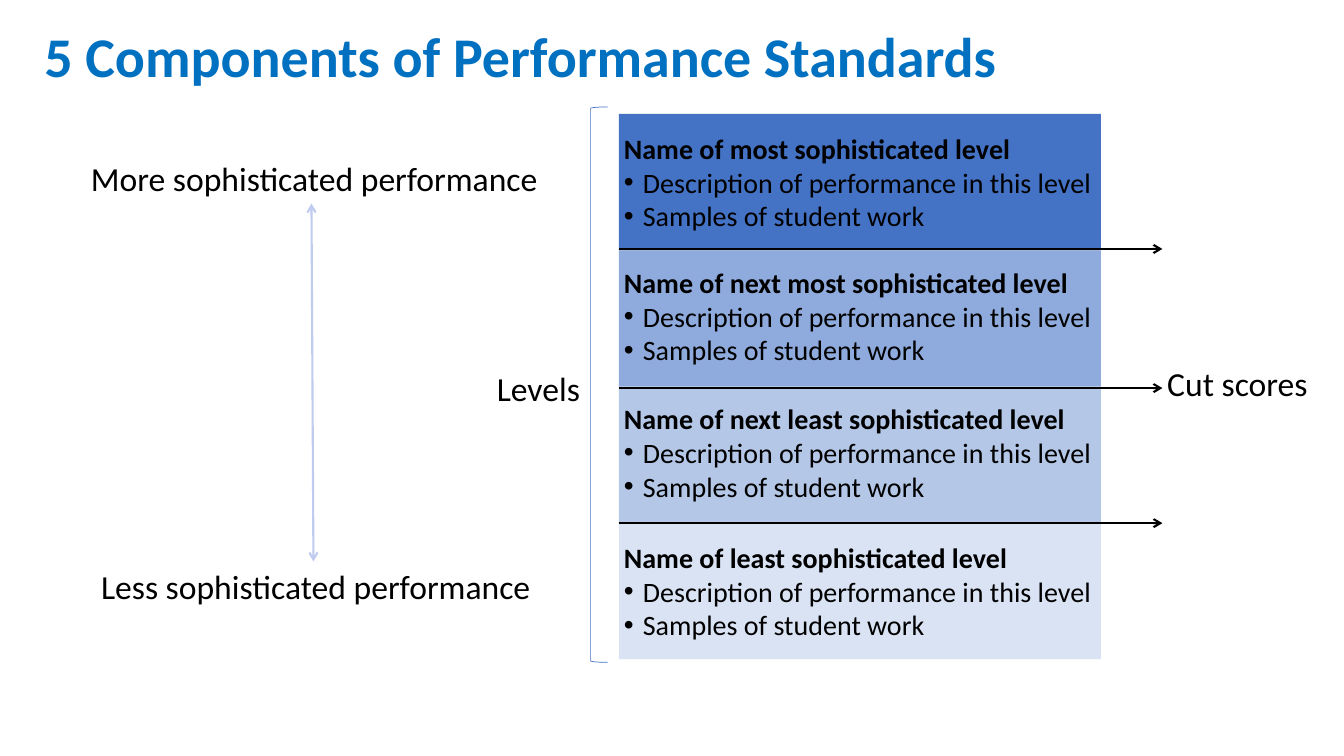
from lxml import etree
from pptx import Presentation
from pptx.dml.color import RGBColor
from pptx.enum import shapes, text
from pptx.oxml.ns import qn
from pptx.util import Pt

LEVELS = [
    ("Name of most sophisticated level", "4472C4", 3.6),
    ("Name of next most sophisticated level", "8FAADC", 0),
    ("Name of next least sophisticated level", "B4C7E7", 0),
    ("Name of least sophisticated level", "DAE3F3", 3.6),
]
DETAILS = ["Description of performance in this level", "Samples of student work"]
CUT_SCORE_YS = [177.84, 277.2, 373.68]
BLACK = "000000"


def color(hex_code):
    return RGBColor.from_string(hex_code)


def set_font(paragraph, size, hex_code=BLACK, bold=False):
    font = paragraph.font
    font.name, font.size, font.bold = "Calibri", Pt(size), bold
    font.color.rgb = color(hex_code)


def add_bullet(paragraph):
    properties = paragraph._p.get_or_add_pPr()
    properties.set("marL", str(Pt(13.5)))
    properties.set("indent", str(-Pt(13.5)))
    etree.SubElement(properties, qn("a:buFont")).set("typeface", "Arial")
    etree.SubElement(properties, qn("a:buChar")).set("char", "•")


def add_title(slide, left, top, width, height):
    title = slide.shapes.title
    title.left, title.top, title.width, title.height = map(Pt, (left, top, width, height))
    frame = title.text_frame
    frame.text = "5 Components of Performance Standards"
    frame.vertical_anchor = text.MSO_ANCHOR.MIDDLE
    heading = frame.paragraphs[0]
    heading.alignment = text.PP_ALIGN.LEFT
    heading.line_spacing = 0.9
    set_font(heading, 40, "0070C0", True)


def add_label(slide, wording, left, top, width, align=text.PP_ALIGN.LEFT):
    label = slide.shapes.add_textbox(Pt(left), Pt(top), Pt(width), Pt(36))
    frame = label.text_frame
    frame.word_wrap = False
    frame.auto_size = text.MSO_AUTO_SIZE.SHAPE_TO_FIT_TEXT
    frame.text = wording
    frame.paragraphs[0].alignment = align
    set_font(frame.paragraphs[0], 24)
    return label


def add_arrow(slide, start, end, hex_code, ends=("tailEnd",)):
    arrow = slide.shapes.add_connector(
        shapes.MSO_CONNECTOR.STRAIGHT, *map(Pt, (*start, *end)))
    arrow.line.color.rgb = color(hex_code)
    arrow.line.width = Pt(1.5)
    line_xml = arrow.line._get_or_add_ln()
    for end_tag in ends:
        etree.SubElement(line_xml, qn("a:" + end_tag)).set("type", "arrow")
    etree.SubElement(arrow._element.spPr, qn("a:effectLst"))
    return arrow


def add_level(slide, name, fill, top_inset, left, top, width, height):
    level = slide.shapes.add_shape(
        shapes.MSO_SHAPE.RECTANGLE, Pt(left), Pt(top), Pt(width), Pt(height))
    level.shadow.inherit = False
    level.fill.solid()
    level.fill.fore_color.rgb = color(fill)
    level.line.fill.background()
    frame = level.text_frame
    frame.word_wrap = True
    frame.vertical_anchor = text.MSO_ANCHOR.MIDDLE
    frame.margin_left = frame.margin_right = frame.margin_bottom = Pt(3.6)
    frame.margin_top = Pt(top_inset)
    frame.text = "\n".join([name, *DETAILS])
    for index, paragraph in enumerate(frame.paragraphs):
        paragraph.alignment = text.PP_ALIGN.LEFT
        if index > 0:
            add_bullet(paragraph)
        set_font(paragraph, 20, bold=index == 0)


def add_levels(slide, left, top, width, height):
    """Stack the levels, with their bracket on the left and the cut scores on the right."""
    level_height = height / len(LEVELS)
    for index, (name, fill, top_inset) in enumerate(LEVELS):
        add_level(slide, name, fill, top_inset,
                  left, top + index * level_height, width, level_height)
    for y in CUT_SCORE_YS:
        add_arrow(slide, (left, y), (left + width + 44, y), BLACK)
    add_label(slide, "Cut scores", left + width + 40.4, top + 174.2, 116)
    add_label(slide, "Levels", left - 94.3, top + 177.8, 75)
    bracket = slide.shapes.add_shape(
        shapes.MSO_SHAPE.LEFT_BRACKET, Pt(left - 20.2), Pt(top - 5), Pt(12.2), Pt(height + 7.2))
    bracket.shadow.inherit = False
    bracket.fill.background()
    bracket.line.color.rgb = color("4472C4")
    bracket.line.width = Pt(0.5)


def add_sophistication_scale(slide, left, top, width, height):
    more = add_label(slide, "More sophisticated performance",
                     left, top, width, text.PP_ALIGN.RIGHT)
    less = add_label(slide, "Less sophisticated performance",
                     left + 7.9, top + height - 36, width - 13, text.PP_ALIGN.RIGHT)
    middle = left + width / 2
    scale = add_arrow(slide, (middle, top + 36), (middle, top + height - 36),
                      "C0CBF0", ("headEnd", "tailEnd"))
    scale.begin_connect(more, 2)
    scale.end_connect(less, 0)


def main():
    deck = Presentation()
    deck.slide_width, deck.slide_height = Pt(960), Pt(540)
    slide = deck.slides.add_slide(deck.slide_layouts[5])
    add_title(slide, 24.5, 8.6, 925.2, 67.7)
    add_levels(slide, 442.1, 81.4, 344.2, 389.5)
    add_sophistication_scale(slide, 54, 109.4, 337, 327.6)
    deck.save("out.pptx")


if __name__ == "__main__":
    main()
